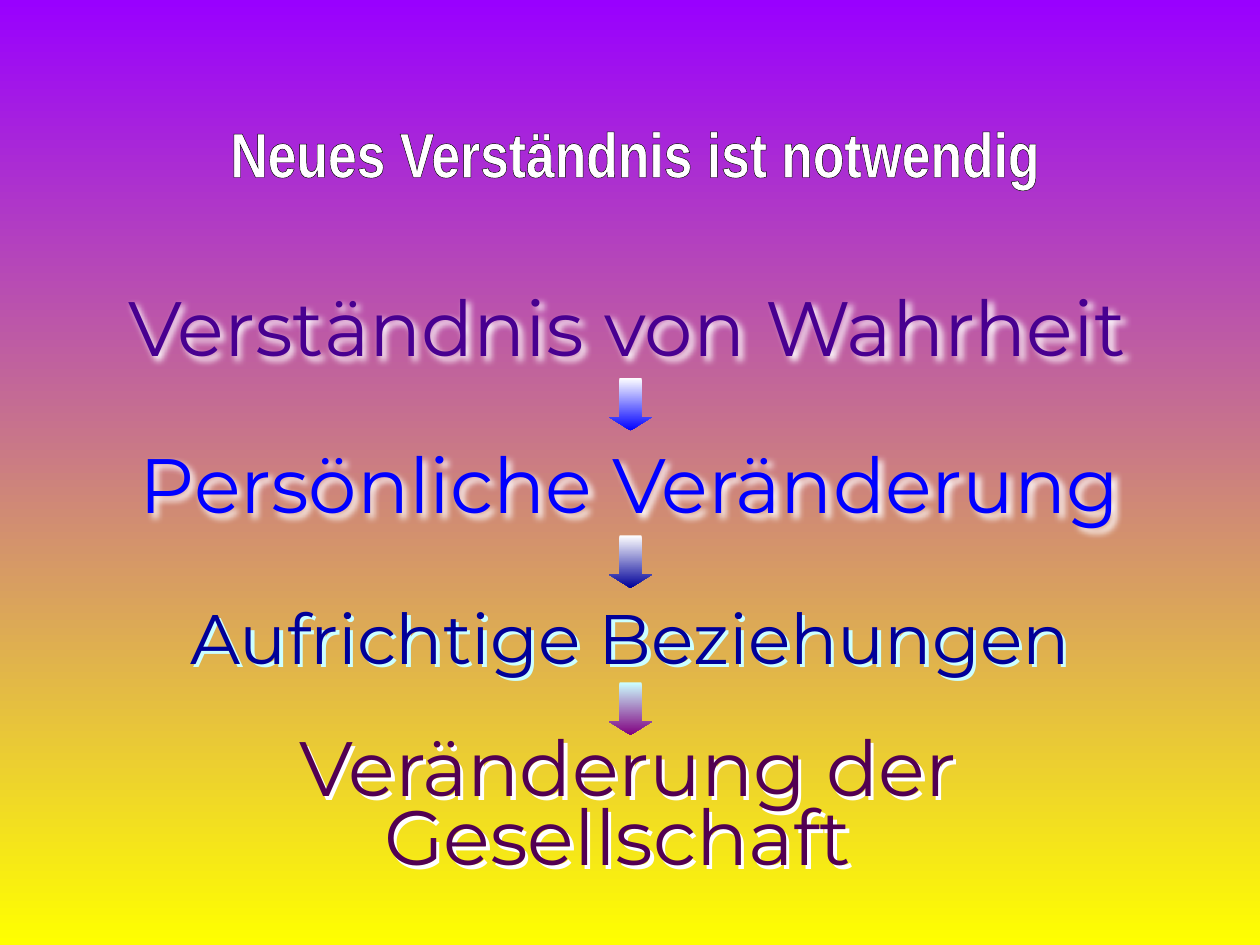
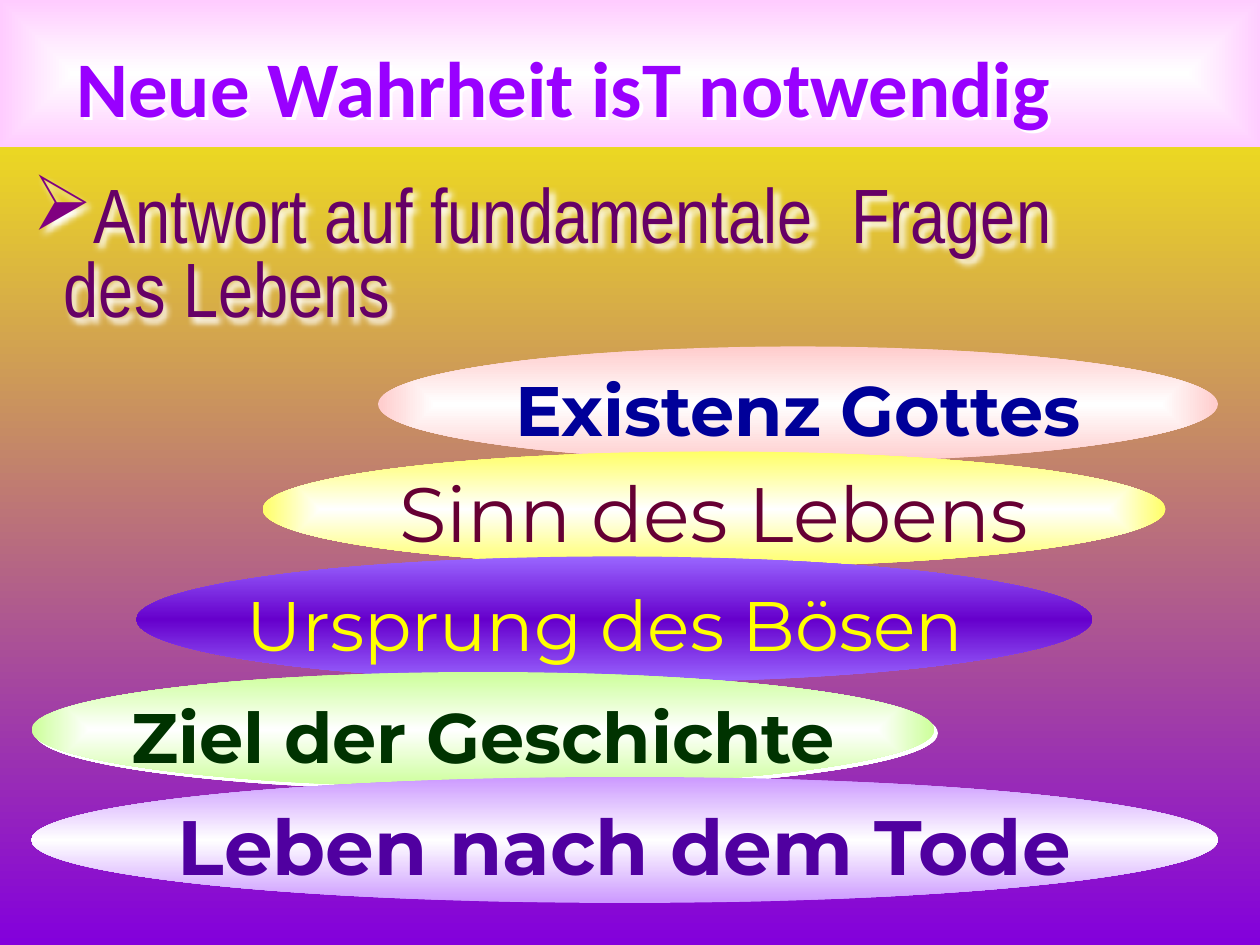
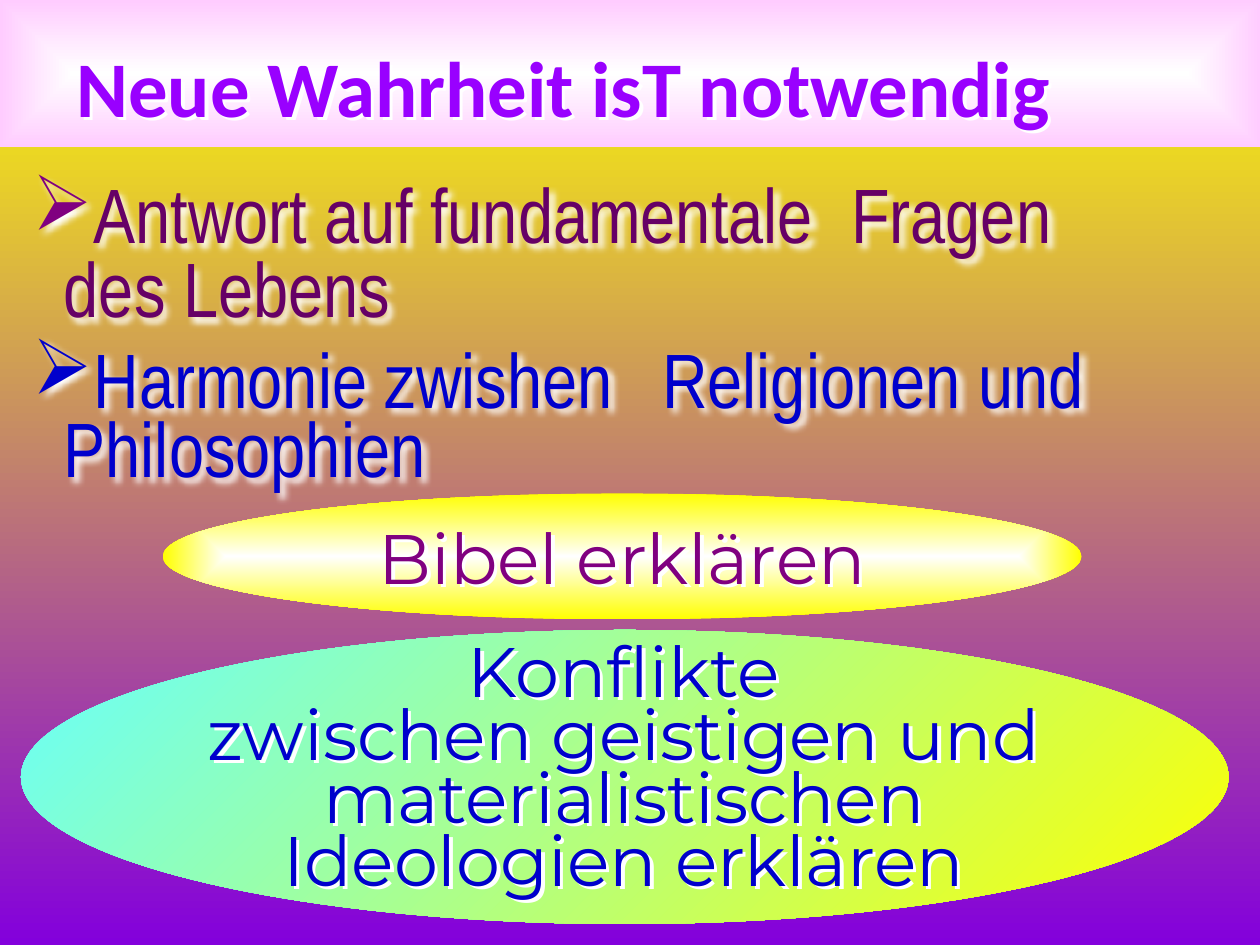
from pptx import Presentation, util as u
from pptx.dml.color import RGBColor
from pptx.enum import shapes, text
from pptx.oxml import parse_xml
from pptx.oxml.ns import nsdecls, qn

COLUMNS, ROWS = 120, 90

WHITE = RGBColor(0xFF, 0xFF, 0xFF)
BLACK = RGBColor(0x00, 0x00, 0x00)
YELLOW = RGBColor(0xFF, 0xFF, 0x00)
PALE_YELLOW = RGBColor(0xFF, 0xFF, 0x66)
VIOLET = RGBColor(0x99, 0x00, 0xFF)
DEEP_VIOLET = RGBColor(0x83, 0x00, 0xDC)
INDIGO = RGBColor(0x48, 0x00, 0x90)
GRAPE = RGBColor(0x50, 0x00, 0xA0)
ROYAL = RGBColor(0x66, 0x00, 0xCC)
PERIWINKLE = RGBColor(0x99, 0x66, 0xFF)
LILAC = RGBColor(0xCC, 0x99, 0xFF)
PURPLE = RGBColor(0x80, 0x00, 0x80)
PLUM = RGBColor(0x66, 0x00, 0x66)
DARK_PLUM = RGBColor(0x52, 0x00, 0x52)
WINE = RGBColor(0x66, 0x00, 0x33)
PINK = RGBColor(0xFF, 0xCC, 0xFF)
ROSE = RGBColor(0xFF, 0xCC, 0xCC)
BLUE = RGBColor(0x00, 0x00, 0xFF)
MID_BLUE = RGBColor(0x00, 0x00, 0xCC)
NAVY = RGBColor(0x00, 0x00, 0x99)
ICE = RGBColor(0xCC, 0xFF, 0xFF)
AQUA = RGBColor(0x66, 0xFF, 0xFF)
LIME = RGBColor(0xCC, 0xFF, 0x99)
DARK_GREEN = RGBColor(0x00, 0x33, 0x00)

BODY, NARROW, HEADING = "Montserrat", "Arial Narrow", "Calibri"
DOWN, DIAGONAL, FROM_CENTRE = 90, 45, None
HARD, SOFT = 0, 4


def paint(fill, owner, colours, angle):
    """Fill with evenly spaced colours; FROM_CENTRE makes them follow the shape."""
    fill.gradient()
    gradient = next(owner.iter(qn("a:gradFill")))
    last = len(colours) - 1
    stops = "".join(
        f'<a:gs pos="{100000 * i // last}"><a:srgbClr val="{colour}"/></a:gs>'
        for i, colour in enumerate(colours))
    if angle is FROM_CENTRE:
        course = ('<a:path path="shape"><a:fillToRect l="50000" t="50000" '
                  'r="50000" b="50000"/></a:path>')
    else:
        course = f'<a:lin ang="{angle * 60000}" scaled="1"/>'
    gradient.getparent().replace(gradient, parse_xml(
        f'<a:gradFill {nsdecls("a")} rotWithShape="1"><a:gsLst>{stops}</a:gsLst>'
        f'{course}</a:gradFill>'))


def cast_shadow(shape, colour, blur):
    effects = shape.element.spPr.find(qn("a:effectLst"))
    effects.append(parse_xml(
        f'<a:outerShdw {nsdecls("a")} blurRad="{u.Pt(blur)}" dist="{u.Pt(2.8)}" '
        f'dir="2700000" algn="ctr" rotWithShape="0">'
        f'<a:srgbClr val="{colour}"/></a:outerShdw>'))


def outline(span, width):
    span.font._element.insert(0, parse_xml(
        f'<a:ln {nsdecls("a")} w="{u.Pt(width)}"><a:solidFill>'
        f'<a:srgbClr val="{BLACK}"/></a:solidFill></a:ln>'))


def add_bullet(para, colour):
    properties = para._p.get_or_add_pPr()
    properties.set("marL", str(u.Inches(0.25)))
    properties.set("indent", str(-u.Inches(0.25)))
    for child in (f'<a:buClr {nsdecls("a")}><a:srgbClr val="{colour}"/></a:buClr>',
                  f'<a:buChar {nsdecls("a")} char="➢"/>'):
        properties.append(parse_xml(child))


class Painter:
    def __init__(self):
        self.deck = Presentation()
        self.deck.slide_width, self.deck.slide_height = u.Inches(10), u.Inches(7.5)
        self.page = None

    def new_page(self, *colours):
        self.page = self.deck.slides.add_slide(self.deck.slide_layouts[6])
        paint(self.page.background.fill, self.page.element, colours, DOWN)

    def place(self, cells):
        """Turn left, top, width, height in grid cells into lengths."""
        column, row = self.deck.slide_width / COLUMNS, self.deck.slide_height / ROWS
        return [u.Emu(round(n * unit)) for n, unit in zip(cells, (column, row) * 2)]

    def set_words(self, box, words, colour, size=40, name=BODY, bold=False, spacing=None,
                  middle=False, wrap=True, bullet=None, edge=0.25):
        frame = box.text_frame
        frame.word_wrap = wrap
        frame.vertical_anchor = text.MSO_ANCHOR.MIDDLE if middle else text.MSO_ANCHOR.TOP
        for i, line in enumerate(words.split("\n")):
            para = frame.add_paragraph() if i else frame.paragraphs[0]
            para.alignment = text.PP_ALIGN.LEFT if bullet else text.PP_ALIGN.CENTER
            para.line_spacing = spacing
            if bullet:
                add_bullet(para, bullet)
            span = para.add_run()
            span.text = line
            for key, value in {"size": u.Pt(size), "name": name, "bold": bold}.items():
                setattr(span.font, key, value)
            span.font.color.rgb = colour
            if edge:
                outline(span, edge)

    def label(self, cells, words, colour, shadow=None, blur=HARD, **style):
        box = self.page.shapes.add_textbox(*self.place(cells))
        self.set_words(box, words, colour, **style)
        if style.get("wrap", True):
            box.text_frame.auto_size = text.MSO_AUTO_SIZE.SHAPE_TO_FIT_TEXT
        box.shadow.inherit = False
        if shadow is not None:
            cast_shadow(box, shadow, blur)

    def shape(self, kind, cells, colours, angle=FROM_CENTRE):
        figure = self.page.shapes.add_shape(kind, *self.place(cells))
        figure.shadow.inherit = False
        paint(figure.fill, figure.element, colours, angle)
        figure.line.fill.background()
        return figure

    def ellipse(self, cells, colours, angle=FROM_CENTRE):
        return self.shape(shapes.MSO_SHAPE.OVAL, cells, colours, angle)

    def arrow(self, top, colours):
        figure = self.shape(shapes.MSO_SHAPE.DOWN_ARROW, (58, top, 4.1, 5), colours, DOWN)
        figure.adjustments[0], figure.adjustments[1] = 0.5, 0.31

    def point(self, cells, words, colour, bullet, spacing):
        self.label(cells, words, colour, WHITE, SOFT, size=44, name=NARROW,
                   spacing=spacing, middle=True, bullet=bullet, edge=0)

    def fundamental_point(self):
        self.point((1.9, 17, 103, 15.2), "Antwort auf fundamentale \tFragen des Lebens",
                   PLUM, PURPLE, 0.8)

    def title_band(self):
        self.shape(shapes.MSO_SHAPE.RECTANGLE, (0, 0, COLUMNS, 14), (WHITE, PINK))
        self.label((0, 3, 107.3, 10.3), "Neue Wahrheit isT notwendig", VIOLET, WHITE,
                   size=45, name=HEADING, bold=True, middle=True)


def build_steps(painter):
    painter.new_page(VIOLET, YELLOW)
    steps = (
        ((5, 26, 109.5, 10), "Verständnis von Wahrheit", INDIGO, WHITE, SOFT, 44, None),
        ((7, 41, 106, 10), "Persönliche Veränderung", BLUE, WHITE, SOFT, 44, None),
        ((13, 56, 94, 9.2), "Aufrichtige Beziehungen", NAVY, ICE, HARD, 40, None),
        ((23.6, 70, 72.4, 14.9), "Veränderung der Gesellschaft ", DARK_PLUM, WHITE, HARD,
         44, 0.75),
    )
    for cells, words, colour, shadow, blur, size, spacing in steps:
        painter.label(cells, words, colour, shadow, blur, size=size, spacing=spacing)
    painter.label((6, 12, 109, 11), "Neues Verständnis ist notwendig", WHITE, size=36,
                  name=NARROW, bold=True, spacing=0.75, wrap=False, edge=2.25)
    for top, colours in ((36, (WHITE, BLUE)), (51, (WHITE, NAVY)), (65, (ICE, PURPLE))):
        painter.arrow(top, colours)


def build_questions(painter):
    painter.new_page(YELLOW, DEEP_VIOLET)
    questions = (
        ((36, 33, 80, 11), (WHITE, ROSE), FROM_CENTRE, "Existenz Gottes", NAVY,
         {"bold": True, "spacing": 1.1}),
        ((25, 43, 86, 11), (WHITE, PALE_YELLOW), FROM_CENTRE, "Sinn des Lebens", WINE,
         {"size": 44, "spacing": 1.05}),
        ((13, 53, 91, 12), (PERIWINKLE, ROYAL, PERIWINKLE), DOWN, "Ursprung des Bösen ",
         YELLOW, {"spacing": 1.1}),
        ((3, 64, 86, 11), (WHITE, LIME), FROM_CENTRE, "Ziel der Geschichte", DARK_GREEN,
         {"bold": True, "spacing": 1.15}),
        ((3, 74, 113, 12), (LILAC, WHITE, LILAC), DOWN, "Leben nach dem Tode", GRAPE,
         {"size": 44, "bold": True, "spacing": 1.1}),
    )
    for cells, colours, angle, words, colour, style in questions:
        figure = painter.ellipse(cells, colours, angle)
        painter.set_words(figure, words, colour, middle=True, wrap=False, **style)
        if colour == DARK_GREEN:
            cast_shadow(figure, WHITE, HARD)
    painter.fundamental_point()
    painter.title_band()


def build_harmony(painter):
    painter.new_page(YELLOW, DEEP_VIOLET)
    painter.point((1.9, 33, 106, 14.4), "Harmonie zwishen\tReligionen und Philosophien",
                  MID_BLUE, MID_BLUE, 0.75)
    painter.ellipse((15.5, 47, 87.5, 12), (WHITE, YELLOW))
    painter.label((20.5, 48.4, 77.5, 9.2), "Bibel erklären", PURPLE, WHITE)
    painter.ellipse((2, 60, 115, 28), (AQUA, YELLOW), DIAGONAL)
    painter.label((13.4, 61, 92, 25.2),
                  "Konflikte\nzwischen geistigen und\nmaterialistischen Ideologien erklären",
                  MID_BLUE, WHITE, spacing=0.75)
    painter.fundamental_point()
    painter.title_band()


def main():
    painter = Painter()
    for build in (build_steps, build_questions, build_harmony):
        build(painter)
    painter.deck.save("out.pptx")


if __name__ == "__main__":
    main()
